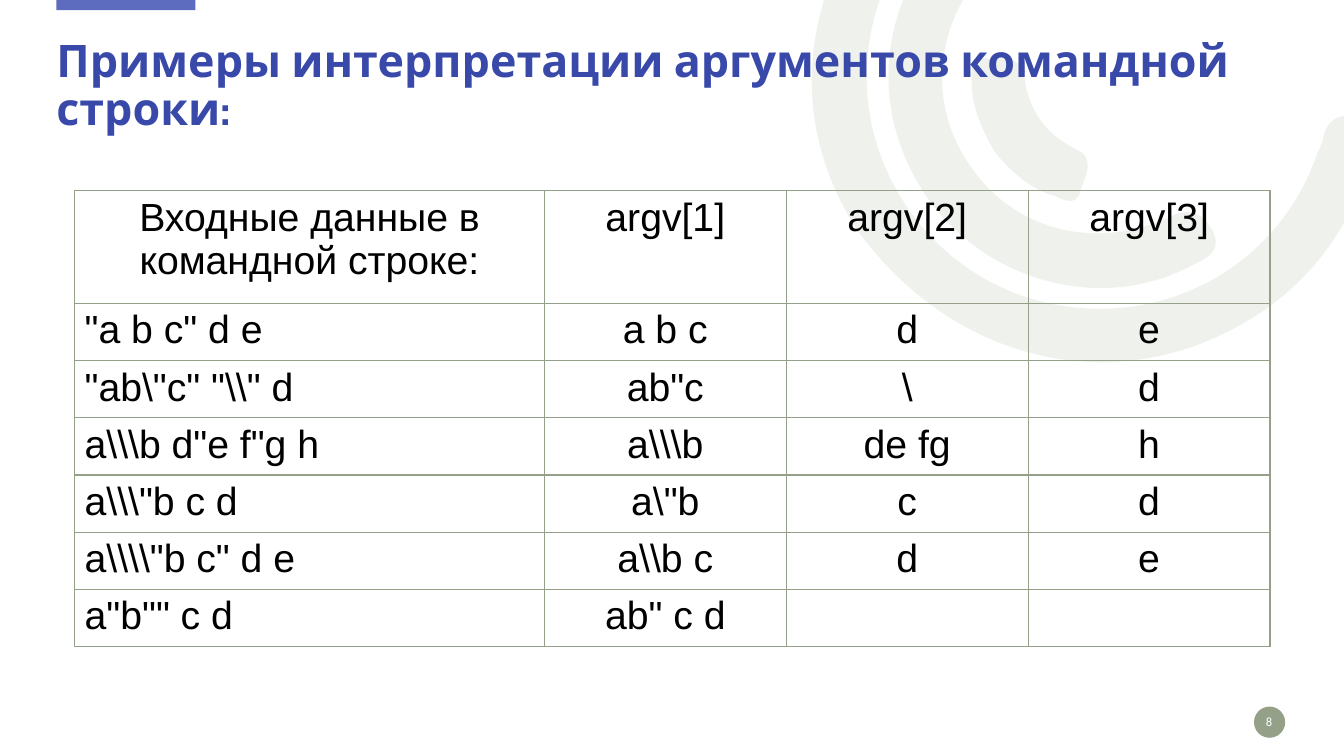
from dataclasses import dataclass

from lxml.etree import SubElement
from pptx import Presentation
from pptx.dml.color import RGBColor
from pptx.enum.lang import MSO_LANGUAGE_ID
from pptx.enum.shapes import MSO_SHAPE
from pptx.enum.text import MSO_ANCHOR, PP_ALIGN
from pptx.oxml.ns import qn
from pptx.util import Inches, Pt

COLORS = {
    "sage": "94A088",
    "mist": "E0E4DB",
    "bar": "5D6CBF",
    "title": "3949AA",
    "black": "000000",
    "white": "FFFFFF",
}


@dataclass
class Arc:
    """A closed ring segment: its start point and cubic curves."""
    start: tuple
    curves: list


@dataclass
class Badge:
    """A plain filled preset shape."""
    kind: MSO_SHAPE
    box: tuple
    color: str


ARCS = [
    Arc((8.51, 2.29), [
        (7.99, 1.49, 7.87, 0.5, 8.38, -0.5),
        (8.9, -1.52, 9.76, -2.03, 10.9, -2.07),
        (11.05, -2.07, 11.21, -2.1, 11.31, -1.95),
        (11.44, -1.75, 11.27, -1.54, 10.98, -1.54),
        (9.67, -1.54, 8.65, -0.59, 8.6, 0.68),
        (8.56, 1.81, 9.36, 2.81, 10.46, 3.02),
        (11.6, 3.24, 12.7, 2.61, 13.07, 1.52),
        (13.09, 1.48, 13.11, 1.44, 13.12, 1.4),
        (13.16, 1.19, 13.27, 1.11, 13.49, 1.17),
        (13.73, 1.24, 13.67, 1.41, 13.61, 1.56),
        (13.34, 2.45, 12.78, 3.07, 11.91, 3.41),
        (10.7, 3.87, 9.36, 3.45, 8.51, 2.29),
    ]),
    Arc((9.22, 1.99), [
        (8.62, 1.15, 8.69, 0.07, 9.4, -0.68),
        (9.51, -0.79, 9.62, -0.95, 9.8, -0.78),
        (9.95, -0.64, 9.97, -0.5, 9.79, -0.32),
        (9.25, 0.26, 9.2, 1.08, 9.65, 1.68),
        (10.08, 2.29, 10.88, 2.49, 11.61, 2.15),
        (11.82, 2.05, 11.93, 2.12, 12.03, 2.29),
        (12.13, 2.5, 11.97, 2.56, 11.83, 2.63),
        (10.96, 3.1, 9.83, 2.82, 9.22, 1.99),
    ]),
    Arc((9.87, 1.51), [
        (9.75, 1.3, 9.64, 1.07, 9.64, 0.82),
        (9.64, 0.73, 9.61, 0.57, 9.76, 0.58),
        (9.92, 0.59, 10.13, 0.53, 10.16, 0.76),
        (10.21, 1.1, 10.36, 1.32, 10.67, 1.48),
        (10.88, 1.57, 10.76, 1.76, 10.72, 1.89),
        (10.68, 2.06, 10.55, 1.98, 10.45, 1.94),
        (10.21, 1.87, 10.03, 1.7, 9.87, 1.51),
    ]),
]
BADGES = [
    Badge(MSO_SHAPE.OVAL, (12.44, 7.01, 0.31, 0.31), "sage"),
    Badge(MSO_SHAPE.RECTANGLE, (0.56, -0.02, 1.38, 0.12), "bar"),
]
ROWS = [
    ("Входные данные в командной строке:", "argv[1]", "argv[2]", "argv[3]"),
    ('"a b c" d e', "a b c", "d", "e"),
    (r'"ab\"c" "\\" d', 'ab"c', "\\", "d"),
    (r'a\\\b d"e f"g h', r"a\\\b", "de fg", "h"),
    (r'a\\\"b c d', r'a\"b', "c", "d"),
    (r'a\\\\"b c" d e', r"a\\b c", "d", "e"),
    ('a"b"" c d', 'ab" c d', "", ""),
]
WIDTHS = [4.66, 2.4, 2.4, 2.4]
HEIGHTS = [1.12] + [0.53] * 5 + [0.55]


def paint(shape, color: str) -> None:
    """Give a shape a solid fill with no line or shadow."""
    shape.shadow.inherit = False
    shape.fill.solid()
    shape.fill.fore_color.rgb = RGBColor.from_string(COLORS[color])
    shape.line.fill.background()


def write(frame, text: str, *, size: float, font: str, color: str = "black",
          bold: bool = False, align=PP_ALIGN.LEFT, pitch: float = 1.0) -> None:
    """Put one formatted paragraph into a text frame."""
    frame.word_wrap = True
    para = frame.paragraphs[0]
    para.alignment = align
    para.line_spacing = pitch
    run = para.add_run()
    run.text = text
    run.font.size = Pt(size)
    run.font.name = font
    run.font.bold = bold
    run.font.language_id = MSO_LANGUAGE_ID.RUSSIAN
    run.font.color.rgb = RGBColor.from_string(COLORS[color])


def label(slide, box: tuple, text: str, **style) -> None:
    """Add a text box without margins, centred vertically."""
    frame = slide.shapes.add_textbox(*map(Inches, box)).text_frame
    frame.margin_left = frame.margin_right = 0
    frame.margin_top = frame.margin_bottom = 0
    frame.vertical_anchor = MSO_ANCHOR.MIDDLE
    write(frame, text, **style)


def sweep(slide, arc: Arc) -> None:
    """Draw an arc as a half transparent curved outline."""
    ends = [tuple(map(Inches, curve[4:])) for curve in arc.curves]
    pen = slide.shapes.build_freeform(*map(Inches, arc.start))
    pen.add_line_segments(ends, close=True)
    shape = pen.convert_to_shape()
    paint(shape, "mist")
    props = shape._element.spPr
    SubElement(props.find(qn("a:solidFill"))[0], qn("a:alpha"), val="50000")
    lines = list(props.iter(qn("a:lnTo")))
    for line, curve in zip(lines, arc.curves):
        line.tag = qn("a:cubicBezTo")
        line.remove(line[0])
        for x, y in zip(curve[::2], curve[1::2]):
            SubElement(line, qn("a:pt"), x=str(Inches(x) - shape.left),
                       y=str(Inches(y) - shape.top))


def frame_cell(cell) -> None:
    """Clear the fill of a cell and rule its four sides."""
    props = cell._tc.get_or_add_tcPr()
    for side in ("lnL", "lnR", "lnT", "lnB"):
        line = SubElement(props, qn(f"a:{side}"), w=str(Pt(1)))
        fill = SubElement(line, qn("a:solidFill"))
        SubElement(fill, qn("a:srgbClr"), val=COLORS["sage"])
    cell.fill.background()


def grid(slide) -> None:
    """Add the table of command line examples."""
    box = (0.74, 1.89, sum(WIDTHS), sum(HEIGHTS))
    table = slide.shapes.add_table(
        len(ROWS), len(WIDTHS), *map(Inches, box)).table
    table.first_row = table.horz_banding = False
    for col, width in zip(table.columns, WIDTHS):
        col.width = Inches(width)
    for r, (row, height) in enumerate(zip(ROWS, HEIGHTS)):
        table.rows[r].height = Inches(height)
        for c, text in enumerate(row):
            cell = table.cell(r, c)
            frame_cell(cell)
            if text:
                align = PP_ALIGN.CENTER if r == 0 or c else PP_ALIGN.LEFT
                write(cell.text_frame, text, size=28, font="Arial",
                      align=align)


def main() -> None:
    """Build the slide and save it."""
    deck = Presentation()
    deck.slide_width, deck.slide_height = Inches(40 / 3), Inches(7.5)
    slide = deck.slides.add_slide(deck.slide_layouts[6])
    for arc in ARCS:
        sweep(slide, arc)
    for badge in BADGES:
        shape = slide.shapes.add_shape(badge.kind, *map(Inches, badge.box))
        paint(shape, badge.color)
    label(slide, (12.43, 7.06, 0.32, 0.2), "8", size=9, font="Calibri",
          color="white", align=PP_ALIGN.CENTER)
    label(slide, (0.56, 0.14, 12.19, 1.45),
          "Примеры интерпретации аргументов командной строки:",
          size=32, font="Cabin", color="title", bold=True, pitch=0.9)
    grid(slide)
    deck.save("out.pptx")


if __name__ == "__main__":
    main()
